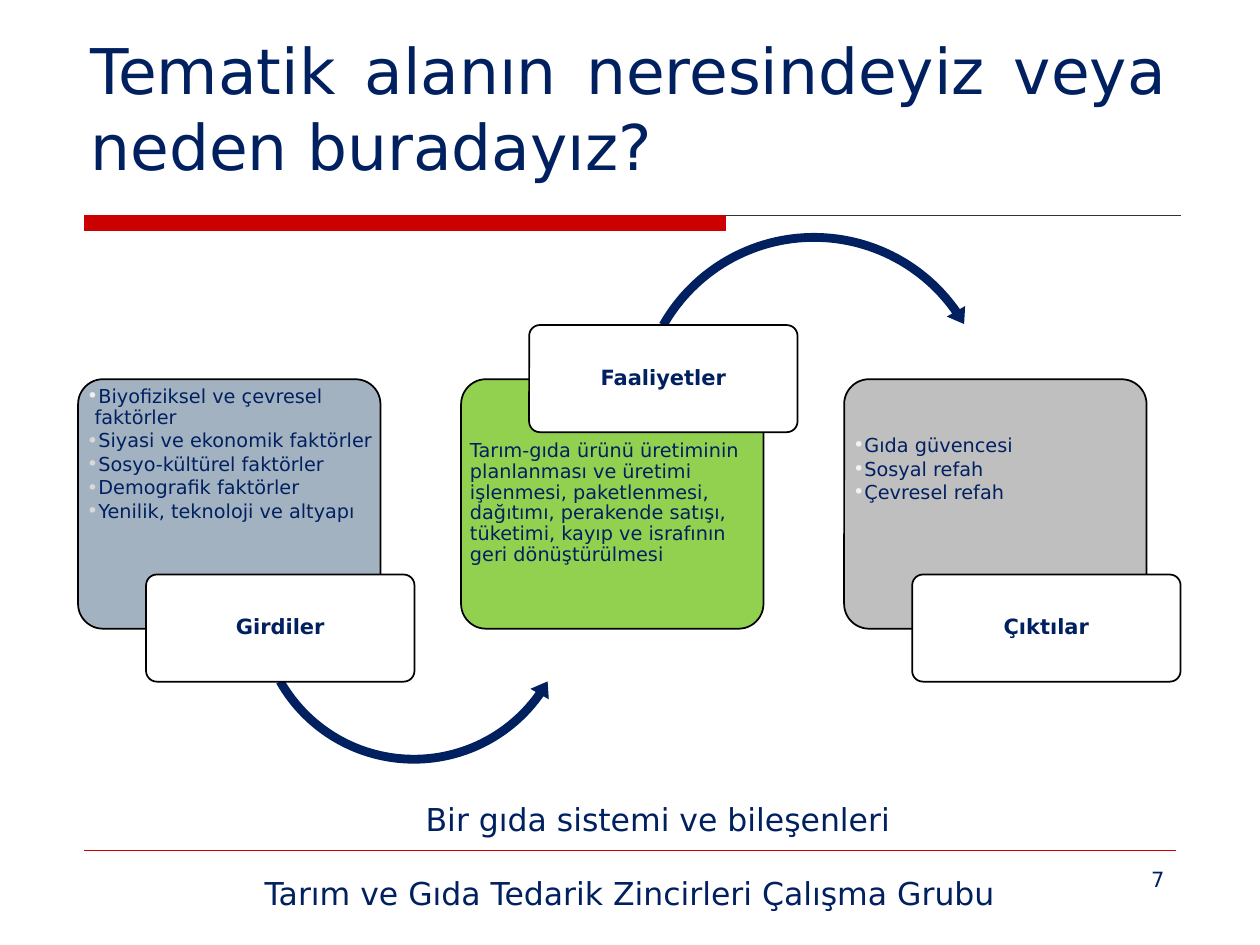
from lxml.etree import SubElement
from pptx import Presentation
from pptx.dml.color import RGBColor
from pptx.enum.shapes import MSO_CONNECTOR, MSO_SHAPE
from pptx.enum.text import MSO_ANCHOR, PP_ALIGN
from pptx.oxml.ns import qn
from pptx.util import Inches, Pt

COLORS = {
    "navy": "002060", "red": "CC0000", "rule": "333333", "black": "000000",
    "white": "FFFFFF", "blue": "A3B2C1", "green": "92D050", "gray": "BFBFBF",
    "dot": "D9D9D9", "light": "EFEFEF", "pale": "F0F2F4",
}
FONT = "DejaVu Sans"


def color(name):
    return RGBColor.from_string(COLORS[name])


def add_bullet(para, tint):
    props = para._p.get_or_add_pPr()
    props.set("marL", str(Inches(0.06)))
    props.set("indent", str(-Inches(0.08)))
    fill = SubElement(props, qn("a:buClr"))
    SubElement(fill, qn("a:srgbClr")).set("val", COLORS[tint])
    SubElement(props, qn("a:buFont")).set("typeface", FONT)
    SubElement(props, qn("a:buChar")).set("char", "•")


def write(frame, lines, size=11, bold=False, align=PP_ALIGN.LEFT,
          anchor=MSO_ANCHOR.TOP, pad=(0.02, 0.02), space=0.9, bullets=()):
    frame.word_wrap = True
    frame.vertical_anchor = anchor
    frame.margin_left = frame.margin_right = Inches(pad[0])
    frame.margin_top = frame.margin_bottom = Inches(pad[1])
    for i, line in enumerate(lines):
        para = frame.add_paragraph() if i else frame.paragraphs[0]
        if bullets:
            add_bullet(para, bullets[i])
        para.alignment = align
        para.line_spacing = space
        if i:
            para.space_before = Pt(1.6)
        run = para.add_run()
        run.text = line
        run.font.name = FONT
        run.font.size = Pt(size)
        run.font.bold = bold
        run.font.color.rgb = color("navy")


class Board:
    def __init__(self, slide):
        self.slide = slide
        self.shapes = slide.shapes

    def shape(self, kind, box, fill, line=None, width=1, adjust=()):
        shape = self.shapes.add_shape(kind, *map(Inches, box))
        for i, value in enumerate(adjust):
            shape.adjustments[i] = value
        shape.shadow.inherit = False
        shape.fill.solid()
        shape.fill.fore_color.rgb = color(fill)
        if line:
            shape.line.color.rgb = color(line)
            shape.line.width = Pt(width)
        else:
            shape.line.fill.background()
        return shape

    def text(self, box, *lines, **style):
        area = self.shapes.add_textbox(*map(Inches, box))
        write(area.text_frame, lines, **style)

    def plain(self, box, line, **style):
        self.text(box, line, pad=(0.1, 0.05), space=1.0, **style)

    def bar(self, box, fill):
        self.shape(MSO_SHAPE.RECTANGLE, box, fill, fill, 0.75)

    def card(self, box, fill):
        return self.shape(MSO_SHAPE.ROUNDED_RECTANGLE, box, fill, "black",
                          adjust=[0.1])

    def label(self, left, top, line):
        card = self.card((left, top, 2.13, 0.85), "white")
        write(card.text_frame, [line], size=12, bold=True,
              align=PP_ALIGN.CENTER, anchor=MSO_ANCHOR.MIDDLE)

    def rule(self, left, right, top, tint):
        line = self.shapes.add_connector(
            MSO_CONNECTOR.STRAIGHT, *map(Inches, (left, top, right, top)))
        line.line.color.rgb = color(tint)
        line.line.width = Pt(0.75)
        SubElement(line._element.spPr, qn("a:effectLst"))

    def arc(self, kind, left, top, size, *angles):
        """Circular arrow; angles are head, end and start in degrees."""
        head, end, start = (angle * 0.6 for angle in angles)
        self.shape(kind, (left, top, size, size), "navy",
                   adjust=[0.07 / size, head, end, start, 0.084 / size])


def main():
    deck = Presentation()
    deck.slide_width, deck.slide_height = Inches(10), Inches(7.5)
    board = Board(deck.slides.add_slide(deck.slide_layouts[6]))

    # Title and rules
    board.rule(0.67, 9.37, 1.71, "rule")
    board.bar((0.67, 1.71, 5.09, 0.12), "red")
    board.rule(0.67, 9.33, 6.75, "red")
    board.plain((0.62, 0.17, 8.74, 1.33),
                "Tematik alanın neresindeyiz veya neden buradayız?",
                size=36, align=PP_ALIGN.JUSTIFY, anchor=MSO_ANCHOR.BOTTOM)

    # Stages: fill, label, label top, text top, bullet tints, lines
    stages = [
        ("blue", "Girdiler", 4.56, 3.05, ["light"] + ["dot"] * 4,
         ["Biyofiziksel ve çevresel faktörler", "Siyasi ve ekonomik faktörler",
          "Sosyo-kültürel faktörler", "Demografik faktörler",
          "Yenilik, teknoloji ve altyapı"]),
        ("green", "Faaliyetler", 2.58, 3.48, [],
         ["Tarım-gıda ürünü üretiminin planlanması ve üretimi işlenmesi, "
          "paketlenmesi, dağıtımı, perakende satışı, tüketimi, kayıp ve "
          "israfının geri dönüştürülmesi"]),
        ("gray", "Çıktılar", 4.56, 3.44, ["pale"] * 3,
         ["Gıda güvencesi", "Sosyal refah", "Çevresel refah"]),
    ]
    arcs = [
        (MSO_SHAPE.LEFT_CIRCULAR_ARROW, 1.98, 3.5, 2.61, 5.6, 35.2, 150.4),
        (MSO_SHAPE.CIRCULAR_ARROW, 5, 1.8, 2.92, 5, 325, 209.6),
    ]
    for i, (fill, name, low, top, tints, lines) in enumerate(stages):
        left = 0.62 + 3.04 * i
        board.card((left, 3.01, 2.4, 1.98), fill)
        board.text((left + 0.05, top, 2.31, 1.46), *lines, bullets=tints)
        if i < len(arcs):
            board.arc(*arcs[i])
        board.label(left + 0.54, low, name)

    # Caption and footer
    board.plain((3.28, 6.3, 4.49, 0.4), "Bir gıda sistemi ve bileşenleri",
                size=18)
    board.plain((7.17, 6.83, 2.17, 0.52), "7", size=12, align=PP_ALIGN.RIGHT)
    board.plain((0, 6.89, 10, 0.4),
                "Tarım ve Gıda Tedarik Zincirleri Çalışma Grubu",
                size=18, align=PP_ALIGN.CENTER)

    deck.save("out.pptx")


if __name__ == "__main__":
    main()
